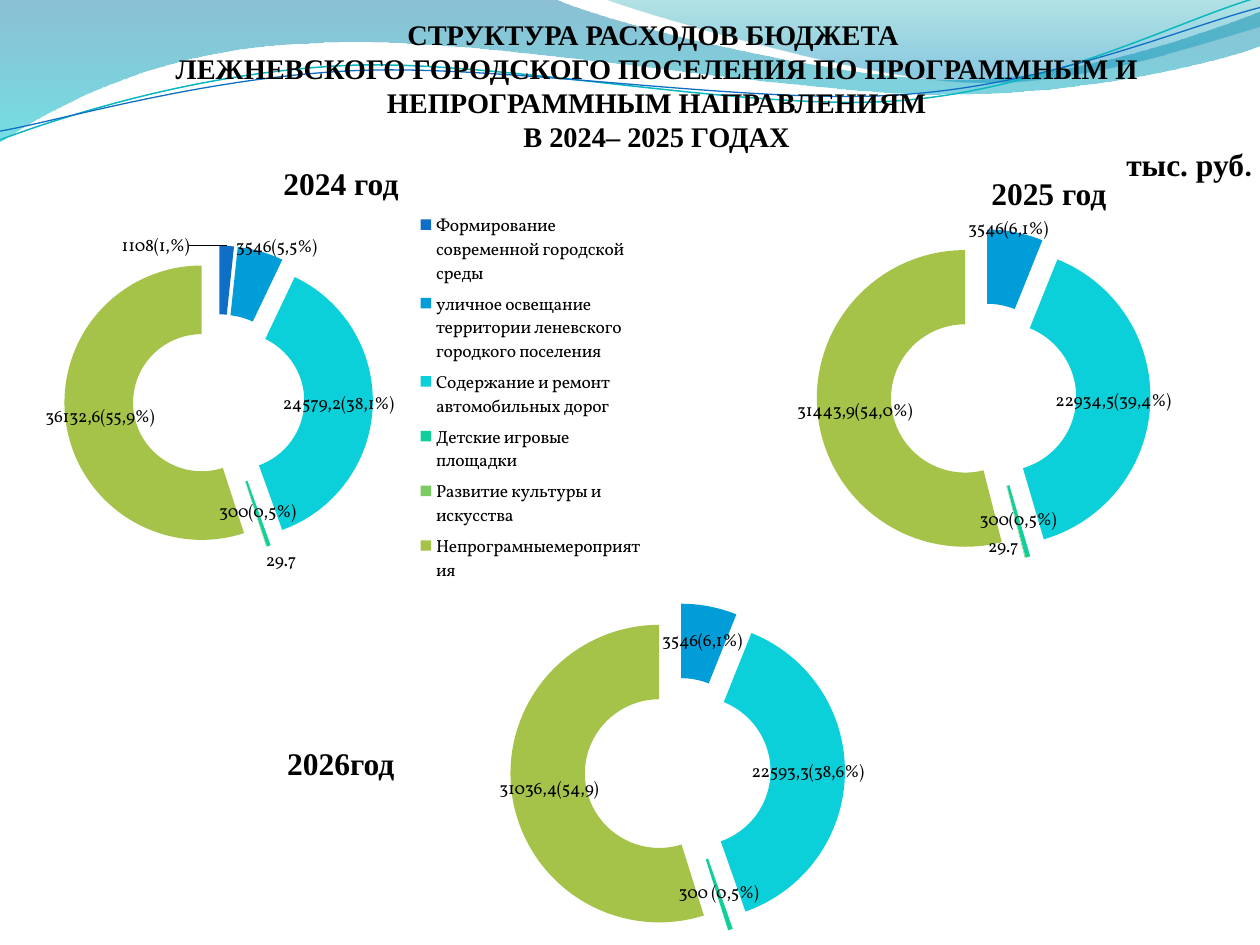
from dataclasses import dataclass

from lxml import etree
from pptx import Presentation
from pptx.chart.data import CategoryChartData
from pptx.dml.color import RGBColor
from pptx.enum.chart import XL_CHART_TYPE, XL_LEGEND_POSITION
from pptx.enum.text import MSO_ANCHOR, MSO_AUTO_SIZE, PP_ALIGN
from pptx.oxml import parse_xml
from pptx.oxml.ns import nsdecls, qn
from pptx.util import Pt

DOUGHNUT = XL_CHART_TYPE.DOUGHNUT_EXPLODED
LEGEND_RIGHT = XL_LEGEND_POSITION.RIGHT
MIDDLE = MSO_ANCHOR.MIDDLE
NO_FIT = MSO_AUTO_SIZE.NONE
CENTER = PP_ALIGN.CENTER
LEFT = PP_ALIGN.LEFT


@dataclass(frozen=True)
class Theme:
    text: str = "000000"
    slices: tuple = ("0F6FC6", "009DD9", "0BD0D9", "10CF9B", "7CCA62", "A5C249")
    heading_font: str = "Times New Roman"
    stop_font: str = "Calibri"
    chart_font: str = "Vollkorn"
    title_size: float = 16.2
    title_spacing: float = 19.4
    heading_size: float = 18
    chart_size: float = 10


CATEGORIES = (
    "Формирование современной городской среды",
    "уличное освещание территории леневского городкого поселения",
    "Содержание и ремонт автомобильных дорог",
    "Детские игровые площадки",
    "Развитие культуры и искусства",
    "Непрограмныемероприятия",
)
NUMBERS = ("1", "2", "3", "4", "5", "6")

WAVES = (
    ((0, 0), ((316.8, -0.7), (342.7, 12.2, 478.1, 45.4, 545.8, 45.4),
              (614.2, 45.4, 689.8, 18.7, 720, 6.5), (720.7, 25.9),
              (707.8, 31.7, 626.4, 54.7, 537.1, 54),
              (447.8, 54, 275, 20.2, 185, 24.5),
              (92.9, 25.9, 33.1, 59.8, -0.7, 81.4)),
     ((0, "0074A1", 45), (1, "00C6CF", 55))),
    ((344.9, -0.7), ((366.5, 7.9, 491, 44.6, 553.7, 46.8),
                     (616.3, 49.7, 691.9, 23, 720, 15.1), (720, 0)),
     ((0, "00A1A9", 30), (0.8, "008BBF", 45))),
)
STRANDS = (
    ((0, 79.9), ((34.6, 67, 113.8, 41, 199.4, 37.4),
                 (284.4, 33.8, 427, 64.1, 513.4, 57.6),
                 (599.8, 51.1, 675.4, 10.8, 718.6, -1.4)), "0AB8BF", 0.85),
    ((0, 74.9), ((33.8, 69.1, 118.1, 43.9, 203.8, 40.3),
                 (290.2, 36.7, 433.4, 60.5, 516.2, 54),
                 (601.9, 48.2, 677.5, 15.1, 720, 4.3)), "0F6FC6", 0.75),
)


def manual_layout(**values):
    parts = "".join(f'<c:{name} val="{value}"/>' for name, value in values.items())
    return parse_xml(f'<c:layout {nsdecls("c")}><c:manualLayout>{parts}'
                     '</c:manualLayout></c:layout>')


class BudgetSlide:
    def __init__(self, page, theme):
        self.page = page
        self.theme = theme

    def style(self, font, name, size, bold=False):
        font.name = name
        font.size = Pt(size)
        font.bold = bold
        font.color.rgb = RGBColor.from_string(self.theme.text)

    def outline(self, start, segments, close):
        builder = self.page.shapes.build_freeform(*map(Pt, start))
        for segment in segments:
            points = zip(map(Pt, segment[::2]), map(Pt, segment[1::2]))
            builder.add_line_segments(list(points), close=False)
        if close:
            builder.add_line_segments([], close=True)
        shape = builder.convert_to_shape()
        shape.shadow.inherit = False
        steps = list(shape._element.iter(qn("a:lnTo")))
        for segment in segments:
            group, steps = steps[:len(segment) // 2], steps[len(segment) // 2:]
            if len(group) == 3:
                curve = etree.Element(qn("a:cubicBezTo"))
                group[0].addprevious(curve)
                for step in group:
                    curve.append(step[0])
                    step.getparent().remove(step)
        return shape

    def wave(self, start, segments, stops):
        shape = self.outline(start, segments, True)
        shape.line.fill.background()
        shape.fill.gradient()
        shape.fill.gradient_angle = 270
        for stop, (position, color, _) in zip(shape.fill.gradient_stops, stops):
            stop.position = position
            stop.color.rgb = RGBColor.from_string(color)
        for element, (_, _, opacity) in zip(shape._element.iter(qn("a:srgbClr")), stops):
            etree.SubElement(element, qn("a:alpha")).set("val", str(opacity * 1000))

    def strand(self, start, segments, color, width):
        shape = self.outline(start, segments, False)
        shape.fill.background()
        shape.line.color.rgb = RGBColor.from_string(color)
        shape.line.width = Pt(width)

    def title(self, left, top, width, height, paragraphs):
        box = self.page.shapes.title
        self.page.shapes._spTree.append(box._element)
        box.left, box.top, box.width, box.height = map(Pt, (left, top, width, height))
        frame = box.text_frame
        frame.text = "\n".join(paragraphs)
        frame.word_wrap = True
        frame.auto_size = NO_FIT
        frame.vertical_anchor = MIDDLE
        frame.margin_bottom = Pt(23)
        for para in frame.paragraphs:
            para.alignment = CENTER
            para.line_spacing = Pt(self.theme.title_spacing)
            for span in para.runs:
                self.style(span.font, self.theme.heading_font, self.theme.title_size, True)

    def label(self, left, top, width, text, align=CENTER, wrap=True):
        box = self.page.shapes.add_textbox(Pt(left), Pt(top), Pt(width), Pt(28.8))
        box.text_frame.word_wrap = wrap
        para = box.text_frame.paragraphs[0]
        para.text = text
        para.alignment = align
        self.style(para.runs[0].font, self.theme.heading_font, self.theme.heading_size, True)
        return para

    def doughnut(self, left, top, height, categories, values, labels):
        data = CategoryChartData()
        data.categories = categories
        data.add_series("Series 1", values)
        chart = self.page.shapes.add_chart(
            DOUGHNUT, Pt(left), Pt(top), Pt(360), Pt(height), data).chart
        chart.has_title = False
        chart.has_legend = False
        self.style(chart.font, self.theme.chart_font, self.theme.chart_size)
        series = chart.plots[0].series[0]
        for index, color in enumerate(self.theme.slices):
            fill = series.points[index].format.fill
            fill.solid()
            fill.fore_color.rgb = RGBColor.from_string(color)
        for index, (text, *offset) in labels.items():
            self.slice_label(series.points[index].data_label, text, offset)
        series.data_labels.show_value = True
        return chart

    def slice_label(self, label, text, offset):
        if text:
            label.text_frame.text = text
            font = label.text_frame.paragraphs[0].runs[0].font
        else:
            font = label.font
        self.style(font, self.theme.chart_font, self.theme.chart_size)
        if offset:
            label._get_or_add_dLbl().insert(1, manual_layout(x=offset[0], y=offset[1]))

    def legend(self, chart):
        chart.has_legend = True
        legend = chart.legend
        legend.position = LEGEND_RIGHT
        legend.include_in_layout = False
        self.style(legend.font, self.theme.chart_font, self.theme.chart_size)
        for old in legend._element.findall(qn("c:layout")):
            legend._element.remove(old)
        legend._element.find(qn("c:legendPos")).addnext(manual_layout(
            xMode="edge", yMode="edge", x=0.63, y=0.03, w=0.36, h=0.95))
        plot_area = chart._chartSpace.find(".//" + qn("c:plotArea"))
        for old in plot_area.findall(qn("c:layout")):
            plot_area.remove(old)
        plot_area.insert(0, manual_layout(
            layoutTarget="inner", xMode="edge", yMode="edge",
            x=0.07, y=0.12, w=0.49, h=0.77))


def main():
    deck = Presentation()
    deck.slide_width, deck.slide_height = Pt(720), Pt(540)
    theme = Theme()
    slide = BudgetSlide(deck.slides.add_slide(deck.slide_layouts[5]), theme)
    for wave in WAVES:
        slide.wave(*wave)
    for strand in STRANDS:
        slide.strand(*strand)
    slide.title(19.4, 13.7, 711.4, 89.3, (
        "СТРУКТУРА РАСХОДОВ БЮДЖЕТА \vЛЕЖНЕВСКОГО ГОРОДСКОГО ПОСЕЛЕНИЯ "
        "ПО ПРОГРАММНЫМ И НЕПРОГРАММНЫМ НАПРАВЛЕНИЯМ",
        "В 2024– 2025 ГОДАХ"))
    units = slide.label(636.5, 79.2, 92.2, "тыс. руб", LEFT, False)
    stop = units.add_run()
    stop.text = "."
    slide.style(stop.font, theme.stop_font, theme.heading_size, True)
    for left, top, width, text in ((135.4, 90, 118.8, "2024 год"),
                                   (534.2, 95.8, 130.3, "2025 год"),
                                   (129.6, 421.9, 130.3, "2026год")):
        slide.label(left, top, width, text)
    chart = slide.doughnut(
        11.5, 112.3, 230.4, CATEGORIES, (1108, 3546, 24579.2, 300, 29.7, 36132.6),
        {0: ("1108(1,%)", -0.11, -0.08), 1: ("3546(5,5%)", 0.04, -0.09),
         2: ("24579,2(38,1%)",), 3: ("300(0,5%)",), 4: (None, 0.04, 0.12),
         5: ("36132,6(55,9%)",)})
    slide.legend(chart)
    slide.doughnut(
        208.1, 331.9, 216, NUMBERS, (0, 3546, 22593.3, 300, 0, 32131),
        {1: ("3546(6,1%)",), 2: ("22593,3(38,6%)",), 3: ("300 (0,5%)",),
         4: (None,), 5: ("31036,4(54,9)",)})
    slide.doughnut(
        382.3, 118.1, 216, NUMBERS, (0, 3546, 22934.5, 300, 29.7, 31443.9),
        {1: ("3546(6,1%)", 0, -0.1), 2: ("22934,5(39,4%)",), 3: ("300(0,5%)",),
         4: (None, -0.02, 0.07), 5: ("31443,9(54,0%)",)})
    deck.save("out.pptx")


if __name__ == "__main__":
    main()
